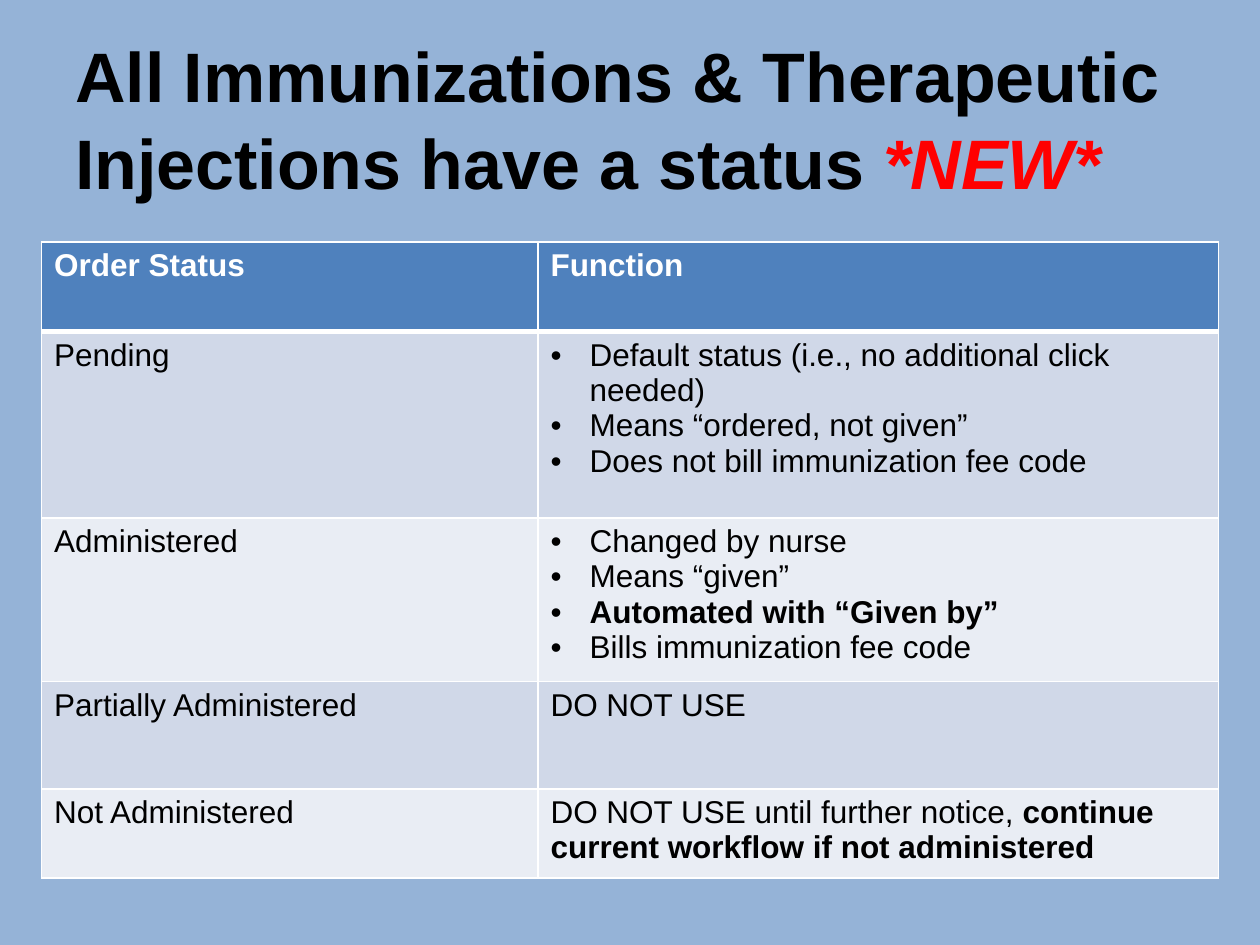
"""Build the slide on the order statuses of immunizations and injections."""
from lxml import etree
from pptx import Presentation, util as u
from pptx.dml.color import RGBColor
from pptx.enum import text
from pptx.oxml import ns

COLORS = {"page": "95B3D7", "header": "4F81BD", "odd": "D0D8E8", "even": "E9EDF4",
          "line": "FFFFFF", "ink": "000000", "new": "FF0000"}
COLUMNS = [3.94, 5.4]
ROWS = [0.71, 1.48, 1.21, 0.85, 0.71]
CONTENT = [
    ("Order Status", ["Function"]),
    ("Pending", ["Default status (i.e., no additional click needed)",
                 "Means “ordered, not given”",
                 "Does not bill immunization fee code"]),
    ("Administered", ["Changed by nurse", "Means “given”",
                      "**Automated with “Given by”",
                      "Bills immunization fee code"]),
    ("Partially Administered", ["DO NOT USE"]),
    ("Not Administered", ["DO NOT USE until further notice, "
                          "**continue current workflow if not administered"]),
]


def write(paragraph, line, size, color, bold):
    font = paragraph.font
    font.name, font.size, font.bold = "Arial", u.Pt(size), bold
    font.color.rgb = RGBColor.from_string(COLORS[color])
    plain, _, strong = line.partition("**")
    if plain:
        paragraph.add_run().text = plain
    if strong:
        span = paragraph.add_run()
        span.text, span.font.bold = strong, True


def draw_borders(cell, widths):
    properties = cell._tc.get_or_add_tcPr()
    for side, width in widths.items():
        line = etree.SubElement(properties, ns.qn(f"a:ln{side}"), w=str(u.Pt(width)))
        fill = etree.SubElement(line, ns.qn("a:solidFill"))
        etree.SubElement(fill, ns.qn("a:srgbClr"), val=COLORS["line"])


deck = Presentation()
deck.slide_width, deck.slide_height = u.Inches(10), u.Inches(7.5)
page = deck.slides.add_slide(deck.slide_layouts[6])
page.background.fill.solid()
page.background.fill.fore_color.rgb = RGBColor.from_string(COLORS["page"])
width, height = deck.slide_width, deck.slide_height

title = page.shapes.add_textbox(int(width * 0.05), int(height * 0.04),
                                int(width * 0.9), int(height / 6))
frame = title.text_frame
frame.word_wrap = True
frame.vertical_anchor = text.MSO_ANCHOR.MIDDLE
heading = frame.paragraphs[0]
heading.line_spacing = 1.04
write(heading, "All Immunizations & Therapeutic Injections have a status ", 40, "ink", True)
flag = heading.add_run()
flag.text, flag.font.italic = "*NEW*", True
flag.font.color.rgb = RGBColor.from_string(COLORS["new"])

table = page.shapes.add_table(len(ROWS), len(COLUMNS), u.Inches(0.33), u.Inches(1.92),
                              u.Inches(sum(COLUMNS)), u.Inches(sum(ROWS))).table
for column, size in zip(table.columns, COLUMNS):
    column.width = u.Inches(size)
for row, size in zip(table.rows, ROWS):
    row.height = u.Inches(size)

for index, (status, functions) in enumerate(CONTENT):
    is_header = index == 0
    shade = "header" if is_header else ("odd" if index % 2 else "even")
    for cell, lines in zip(table.rows[index].cells, ([status], functions)):
        draw_borders(cell, {"L": 1, "R": 1, "T": 3 if index == 1 else 1,
                            "B": 3 if is_header else 1})
        cell.fill.solid()
        cell.fill.fore_color.rgb = RGBColor.from_string(COLORS[shade])
        for number, line in enumerate(lines):
            frame = cell.text_frame
            paragraph = frame.add_paragraph() if number else frame.paragraphs[0]
            if len(lines) > 1:
                properties = paragraph._p.get_or_add_pPr()
                properties.set("marL", str(u.Inches(0.31)))
                properties.set("indent", str(u.Inches(-0.31)))
                etree.SubElement(properties, ns.qn("a:buFont"), typeface="Arial")
                etree.SubElement(properties, ns.qn("a:buChar"), char="•")
            write(paragraph, line, 18, "line" if is_header else "ink", is_header)

deck.save("out.pptx")
